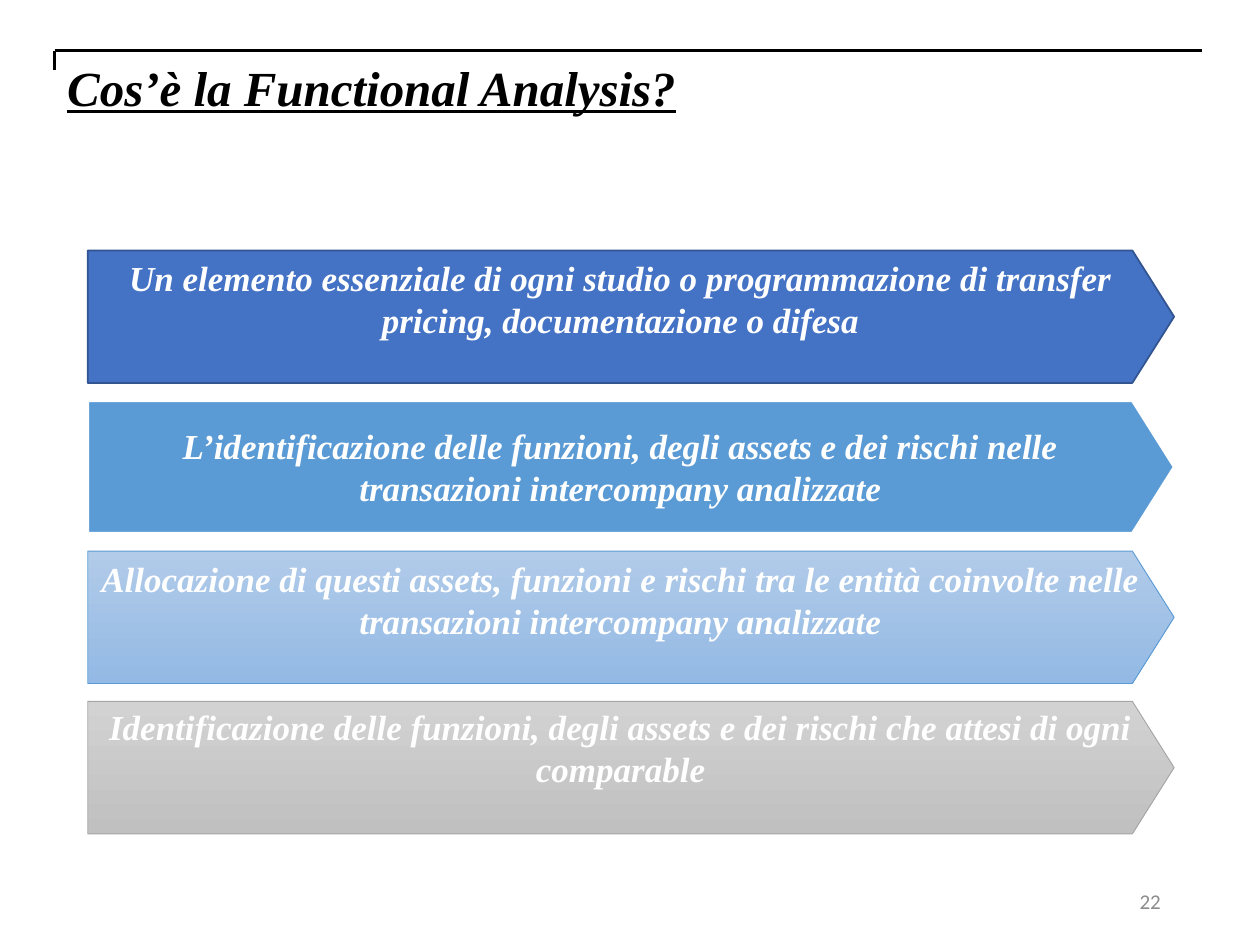
from pptx import Presentation
from pptx import util as u
from pptx.dml.color import RGBColor
from pptx.enum import shapes, text
from pptx.oxml.ns import qn
from lxml import etree

SERIF = "Times New Roman"
BLACK, WHITE, GREY = "000000", "FFFFFF", "8C8C8C"


def color(value):
    return RGBColor.from_string(value)


class SlideBuilder:
    def __init__(self, slide):
        self.slide = slide

    def set_text(self, shape, wording, size, value, align, font=SERIF, emphasis=True):
        frame = shape.text_frame
        frame.word_wrap = True
        frame.vertical_anchor = text.MSO_ANCHOR.MIDDLE
        paragraph = frame.paragraphs[0]
        paragraph.text = wording
        paragraph.alignment = align
        paragraph.font.name = font
        paragraph.font.size = u.Pt(size)
        paragraph.font.bold = paragraph.font.italic = emphasis
        paragraph.font.color.rgb = color(value)
        return paragraph

    def title(self, wording, left, top, width, height):
        shape = self.slide.shapes.title
        shape.left, shape.top = u.Cm(left), u.Cm(top)
        shape.width, shape.height = u.Cm(width), u.Cm(height)
        paragraph = self.set_text(shape, wording, 28, BLACK, text.PP_ALIGN.LEFT)
        paragraph.font.underline = True
        paragraph.line_spacing = 0.9

    def page_number(self, number, left, top, width, height):
        shape = self.slide.shapes.add_textbox(
            u.Cm(left), u.Cm(top), u.Cm(width), u.Cm(height))
        self.set_text(shape, number, 12, GREY, text.PP_ALIGN.RIGHT, "Calibri", False)

    def line(self, x1, y1, x2, y2):
        connector = self.slide.shapes.add_connector(
            shapes.MSO_CONNECTOR.STRAIGHT, u.Cm(x1), u.Cm(y1), u.Cm(x2), u.Cm(y2))
        connector.line.color.rgb = color(BLACK)
        connector.line.width = u.Pt(1.5)
        properties = connector._element.find(qn("p:spPr"))
        etree.SubElement(properties, qn("a:effectLst"))

    def arrow(self, wording, left, top, width, height, fills, outline, weight, bottom):
        shape = self.slide.shapes.add_shape(
            shapes.MSO_SHAPE.PENTAGON, u.Cm(left), u.Cm(top), u.Cm(width), u.Cm(height))
        shape.adjustments[0] = 0.315
        shape.shadow.inherit = False
        if len(fills) == 1:
            shape.fill.solid()
            shape.fill.fore_color.rgb = color(fills[0])
        else:
            shape.fill.gradient()
            shape.fill.gradient_angle = 270
            for stop, value in zip(shape.fill.gradient_stops, fills):
                stop.color.rgb = color(value)
        shape.line.color.rgb = color(outline)
        shape.line.width = u.Pt(weight)
        shape.text_frame.margin_bottom = u.Cm(bottom)
        self.set_text(shape, wording, 20, WHITE, text.PP_ALIGN.CENTER)


ARROWS = [
    ("Un elemento essenziale di ogni studio o programmazione di transfer pricing, "
     "documentazione o difesa", ["4472C4"], "325491", 1, 0.86),
    ("L’identificazione delle funzioni, degli assets e dei rischi nelle transazioni "
     "intercompany analizzate", ["5B9BD5"], WHITE, 1.5, 0.13),
    ("Allocazione di questi assets, funzioni e rischi tra le entità coinvolte nelle "
     "transazioni intercompany analizzate", ["B1CBE9", "93B9E4"], "5B9BD5", 0.5, 0.86),
    ("Identificazione delle funzioni, degli assets e dei rischi che attesi di ogni "
     "comparable", ["D2D2D2", "C0C0C0"], "A5A5A5", 0.5, 0.94),
]


def main():
    presentation = Presentation()
    presentation.slide_width, presentation.slide_height = u.Cm(25.4), u.Cm(19.05)
    slide = presentation.slides.add_slide(presentation.slide_layouts[5])
    builder = SlideBuilder(slide)

    builder.title("Cos’è la Functional Analysis?", 1.1, 1.02, 21.9, 1.6)
    builder.page_number("22", 17.93, 17.65, 5.72, 1.02)
    for row, (wording, *style) in enumerate(ARROWS):
        builder.arrow(wording, 1.77, 5.05 + row * 3.03, 21.9, 2.67, *style)
    builder.line(1.1, 1.02, 24.23, 1.02)
    builder.line(1.1, 1.02, 1.1, 1.42)

    presentation.save("out.pptx")


if __name__ == "__main__":
    main()
